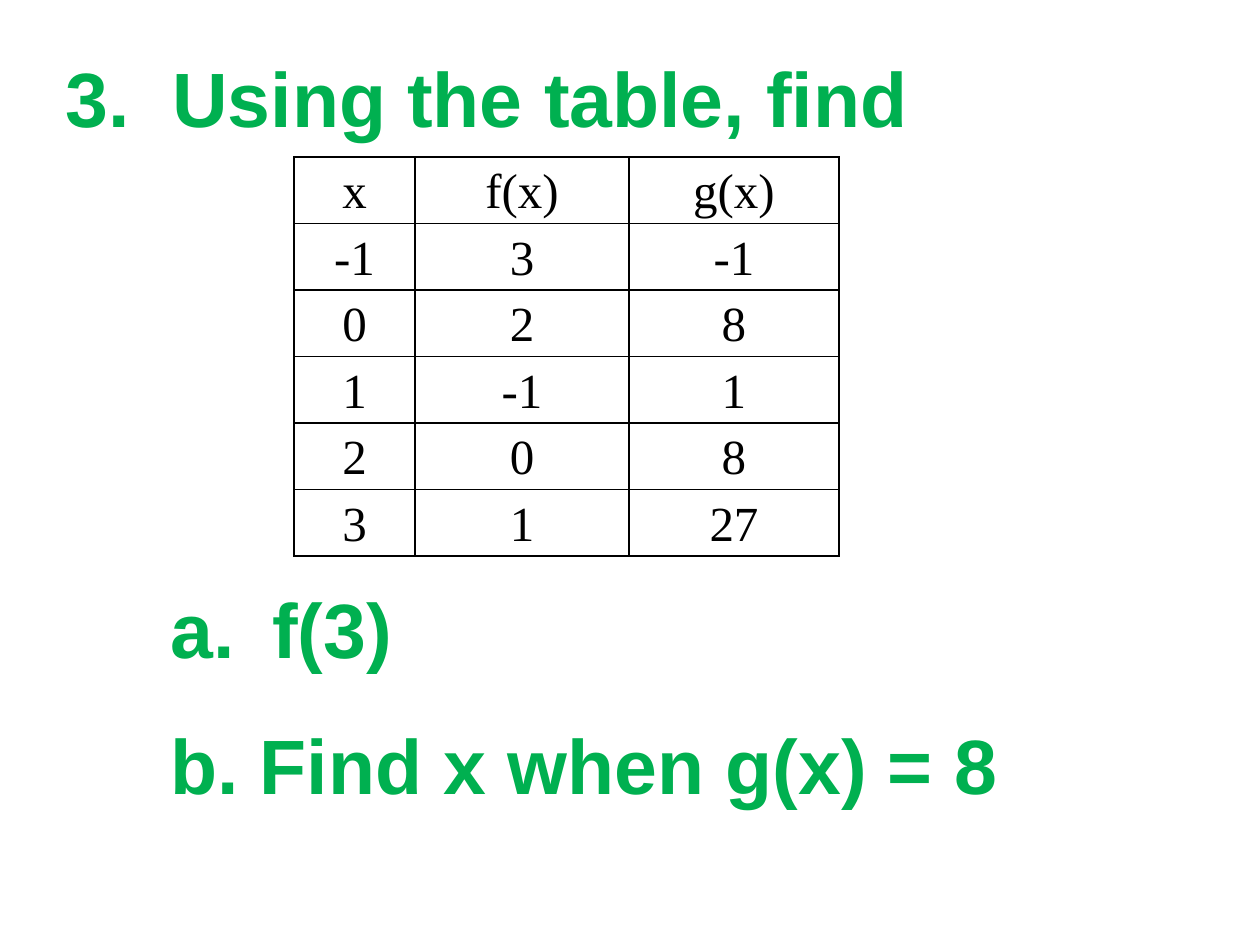
from dataclasses import dataclass

from lxml.etree import SubElement
from pptx import Presentation
from pptx.dml.color import RGBColor
from pptx.enum.text import MSO_ANCHOR as Anchor, PP_ALIGN as Align
from pptx.oxml.ns import qn
from pptx.util import Emu, Pt

PX_PER_INCH = 126


@dataclass(frozen=True)
class Theme:
    green: RGBColor = RGBColor(0x00, 0xB0, 0x50)
    black: RGBColor = RGBColor(0x00, 0x00, 0x00)
    heading_font: str = "Arial"
    table_font: str = "Times New Roman"
    heading_size: int = 44
    table_size: int = 28
    border_width: int = 1
    question_gap: int = 25


THEME = Theme()
ROWS = [
    ("x", "f(x)", "g(x)"),
    ("-1", "3", "-1"),
    ("0", "2", "8"),
    ("1", "-1", "1"),
    ("2", "0", "8"),
    ("3", "1", "27"),
]
COLUMN_WIDTHS = (121, 214, 210)


def px(n):
    return Emu(round(n * 914400 / PX_PER_INCH))


def format_runs(p, font, size, color, bold=False):
    for r in p.runs:
        r.font.name = font
        r.font.size = Pt(size)
        r.font.bold = bold
        r.font.color.rgb = color


def format_heading(p):
    p.alignment = Align.LEFT
    format_runs(p, THEME.heading_font, THEME.heading_size, THEME.green, bold=True)


def add_title(s, text, left, top, width, height):
    sp = s.shapes.title
    sp.left, sp.top, sp.width, sp.height = map(px, (left, top, width, height))
    tf = sp.text_frame
    tf.text = text
    tf.word_wrap = True
    tf.vertical_anchor = Anchor.TOP
    format_heading(tf.paragraphs[0])


def set_borders(cell):
    tcPr = cell._tc.get_or_add_tcPr()
    for i, side in enumerate(("lnL", "lnR", "lnT", "lnB")):
        ln = tcPr.makeelement(qn(f"a:{side}"), {"w": str(Pt(THEME.border_width))})
        fill = SubElement(ln, qn("a:solidFill"))
        SubElement(fill, qn("a:srgbClr"), val=str(THEME.black))
        tcPr.insert(i, ln)


def fill_cell(cell, text):
    cell.text = text
    cell.fill.background()
    cell.margin_left = cell.margin_right = px(9)
    cell.margin_top = cell.margin_bottom = 0
    p = cell.text_frame.paragraphs[0]
    p.alignment = Align.CENTER
    p.line_spacing = 1.15
    format_runs(p, THEME.table_font, THEME.table_size, THEME.black)
    set_borders(cell)


def add_value_table(s, left, top, height):
    frame = s.shapes.add_table(len(ROWS), len(COLUMN_WIDTHS), px(left), px(top),
                               px(sum(COLUMN_WIDTHS)), px(height))
    table = frame.table
    table.first_row = table.horz_banding = False
    for column, width in zip(table.columns, COLUMN_WIDTHS):
        column.width = px(width)
    for row, values in zip(table.rows, ROWS):
        for cell, value in zip(row.cells, values):
            fill_cell(cell, value)


def set_hanging_indent(p, indent):
    pPr = p._p.get_or_add_pPr()
    pPr.set("marL", str(px(indent)))
    pPr.set("indent", str(-px(indent)))
    return pPr


def add_questions(s, left, top, width, height):
    tf = s.shapes.add_textbox(*map(px, (left, top, width, height))).text_frame
    tf.text = "f(3)\nb. Find x when g(x) = 8"
    tf.word_wrap = True
    tf.vertical_anchor = Anchor.MIDDLE
    for p in tf.paragraphs:
        format_heading(p)
        set_hanging_indent(p, 102)
    first, second = tf.paragraphs
    SubElement(first._p.get_or_add_pPr(), qn("a:buAutoNum"), type="alphaLcPeriod")
    second.space_before = Pt(THEME.question_gap)


def main():
    prs = Presentation()
    prs.slide_width, prs.slide_height = px(1260), px(945)
    s = prs.slides.add_slide(prs.slide_layouts.get_by_name("Title Only"))
    add_title(s, "3.  Using the table, find", 53, 44, 1113, 144)
    add_value_table(s, 294, 157, 399)
    add_questions(s, 158, 494, 1008, 403)
    prs.save("out.pptx")


if __name__ == "__main__":
    main()
